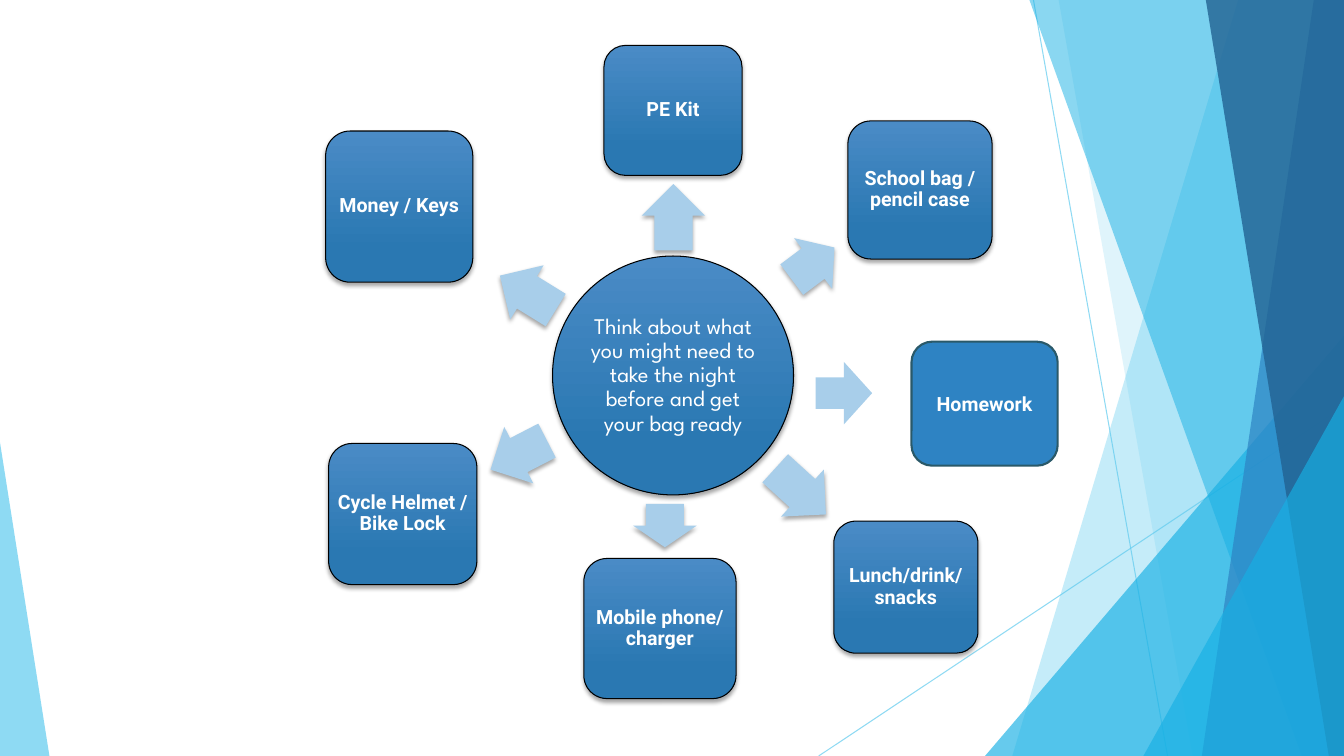
from lxml.etree import SubElement as Sub
from pptx import Presentation
from pptx.dml.color import RGBColor as Rgb
from pptx.enum.shapes import MSO_CONNECTOR as Link, MSO_SHAPE as Kind
from pptx.enum.text import MSO_ANCHOR as Anchor, PP_ALIGN as Align
from pptx.oxml.ns import qn
from pptx.util import Inches, Pt

WIDE, HIGH = 13.33, 7.5
HUES = {
    "sky": "5FCBEF", "aqua": "17B0E4", "blue": "2E83C3", "navy": "226292",
    "top": "4A8BC6", "base": "2A78B2", "pale": "A8CEEA", "edge": "2A5969",
    "black": "000000", "white": "FFFFFF",
}


class Board:
    """Draws styled elements on one slide."""

    def __init__(self, slide):
        self.shapes = slide.shapes

    def hue(self, name):
        return Rgb.from_string(HUES[name])

    def fade(self, part, pct):
        tone = next(part.iter(qn("a:srgbClr")))
        Sub(tone, qn("a:alpha"), val=str(pct * 1000))

    def paint(self, shape, name, pct=100):
        shape.shadow.inherit = False
        shape.line.fill.background()
        shape.fill.solid()
        shape.fill.fore_color.rgb = self.hue(name)
        if pct < 100:
            self.fade(shape.element.spPr, pct)

    def shade(self, shape):
        glow = shape.element.spPr.find(qn("a:effectLst"))
        drop = Sub(glow, qn("a:outerShdw"), blurRad=str(Pt(3)), dist=str(Pt(2)),
                   dir="5400000", rotWithShape="0")
        tone = Sub(drop, qn("a:srgbClr"), val=HUES["black"])
        Sub(tone, qn("a:alpha"), val="35000")

    def outline(self, shape, name, size):
        shape.line.color.rgb = self.hue(name)
        shape.line.width = Pt(size)

    def blend(self, shape):
        shape.fill.gradient()
        shape.fill.gradient_angle = 270
        for stop, name, place in zip(shape.fill.gradient_stops, ("top", "base"), (0, 0.78)):
            stop.color.rgb = self.hue(name)
            stop.position = place

    def add(self, kind, box, turn=0, adjust=()):
        shape = self.shapes.add_shape(kind, *map(Inches, box))
        shape.rotation = turn
        for i, value in enumerate(adjust):
            shape.adjustments[i] = value
        return shape

    def line(self, *ends):
        link = self.shapes.add_connector(Link.STRAIGHT, *map(Inches, ends))
        self.outline(link, "sky", 0.75)
        self.fade(link.element.spPr, 70)
        Sub(link.element.spPr, qn("a:effectLst"))

    def band(self, top, base, name, pct):
        form = self.shapes.build_freeform(Inches(top), 0)
        rest = ((WIDE, 0), (WIDE, HIGH), (base, HIGH))
        form.add_line_segments([(Inches(x), Inches(y)) for x, y in rest])
        self.paint(form.convert_to_shape(), name, pct)

    def wedge(self, box, tip, name, pct):
        self.paint(self.add(Kind.ISOSCELES_TRIANGLE, box, adjust=(tip,)), name, pct)

    def arrow(self, box, turn=0, stem=0.6, shaded=True):
        shape = self.add(Kind.RIGHT_ARROW, box, turn, (stem, 0.5))
        self.paint(shape, "pale")
        if shaded:
            self.shade(shape)

    def label(self, shape, text, face, size, bold, lead):
        frame = shape.text_frame
        frame.text = text
        frame.word_wrap = True
        frame.vertical_anchor = Anchor.MIDDLE
        frame.margin_left = frame.margin_right = Inches(0.01)
        frame.margin_top = frame.margin_bottom = Inches(0.02)
        para = frame.paragraphs[0]
        para.alignment = Align.CENTER
        para.line_spacing = lead
        font = para.runs[0].font
        font.name, font.size, font.bold = face, Pt(size), bold
        font.color.rgb = self.hue("white")

    def node(self, kind, box, text, face="Roboto", size=14, bold=True):
        shape = self.add(kind, box)
        self.paint(shape, "blue")
        self.blend(shape)
        self.outline(shape, "black", 0.75)
        self.shade(shape)
        self.label(shape, text, face, size, bold, 0.9)

    def card(self, box, text):
        shape = self.add(Kind.ROUNDED_RECTANGLE, box)
        self.paint(shape, "blue")
        self.outline(shape, "edge", 1.5)
        self.label(shape, text, "Roboto", 14, True, 1.0)


def backdrop(board):
    board.line(10.25, 0, 11.58, HIGH)
    board.line(WIDE, 4.03, 8.12, HIGH)
    board.band(12.28, 10.04, "sky", 36)
    board.band(10.5, 11.83, "sky", 20)
    board.wedge((9.77, 3.33, 3.56, 4.17), 1, "aqua", 66)
    board.band(10.21, 12.91, "aqua", 50)
    board.band(13.03, 11.92, "blue", 70)
    board.band(11.96, 13.18, "navy", 80)
    board.wedge((11.34, 3.93, 1.99, 3.57), 1, "aqua", 66)
    board.wedge((0, 4.39, 0.49, 3.11), 0, "sky", 70)


def wheel(board):
    board.node(Kind.OVAL, (5.48, 2.54, 2.39, 2.37),
               "Think about what you might need to take the night before and get your bag ready",
               "League Spartan", 16, False)
    soft, plain = Kind.FLOWCHART_ALTERNATE_PROCESS, Kind.ROUNDED_RECTANGLE
    items = (
        ("PE Kit", soft, (5.99, 0.45, 1.37, 1.29), (6.35, 1.84, 0.66, 0.63), 270),
        ("School bag / pencil case", soft, (8.41, 1.2, 1.43, 1.37), (7.8, 2.3, 0.53, 0.63), 323.1),
        ("Lunch/drink/ snacks", soft, (8.27, 5.17, 1.43, 1.31), (7.6, 4.56, 0.68, 0.63), 42.3),
        ("Mobile phone/ charger", soft, (5.79, 5.54, 1.51, 1.39), (6.38, 4.9, 0.43, 0.63), 90),
        ("Cycle Helmet / Bike Lock", soft, (3.26, 4.4, 1.47, 1.4), (4.83, 4.2, 0.63, 0.63), 152.8),
        ("Money / Keys", plain, (3.23, 1.3, 1.46, 1.5), (4.91, 2.59, 0.65, 0.63), 211.7),
    )
    for text, kind, box, spot, turn in items:
        board.arrow(spot, turn)
        board.node(kind, box, text)
    board.card((9.04, 3.39, 1.45, 1.23), "Homework")
    board.arrow((8.09, 3.59, 0.56, 0.62), stem=0.5, shaded=False)


def main():
    deck = Presentation()
    deck.slide_width, deck.slide_height = Inches(WIDE), Inches(HIGH)
    board = Board(deck.slides.add_slide(deck.slide_layouts[6]))
    backdrop(board)
    wheel(board)
    deck.save("out.pptx")


if __name__ == "__main__":
    main()
